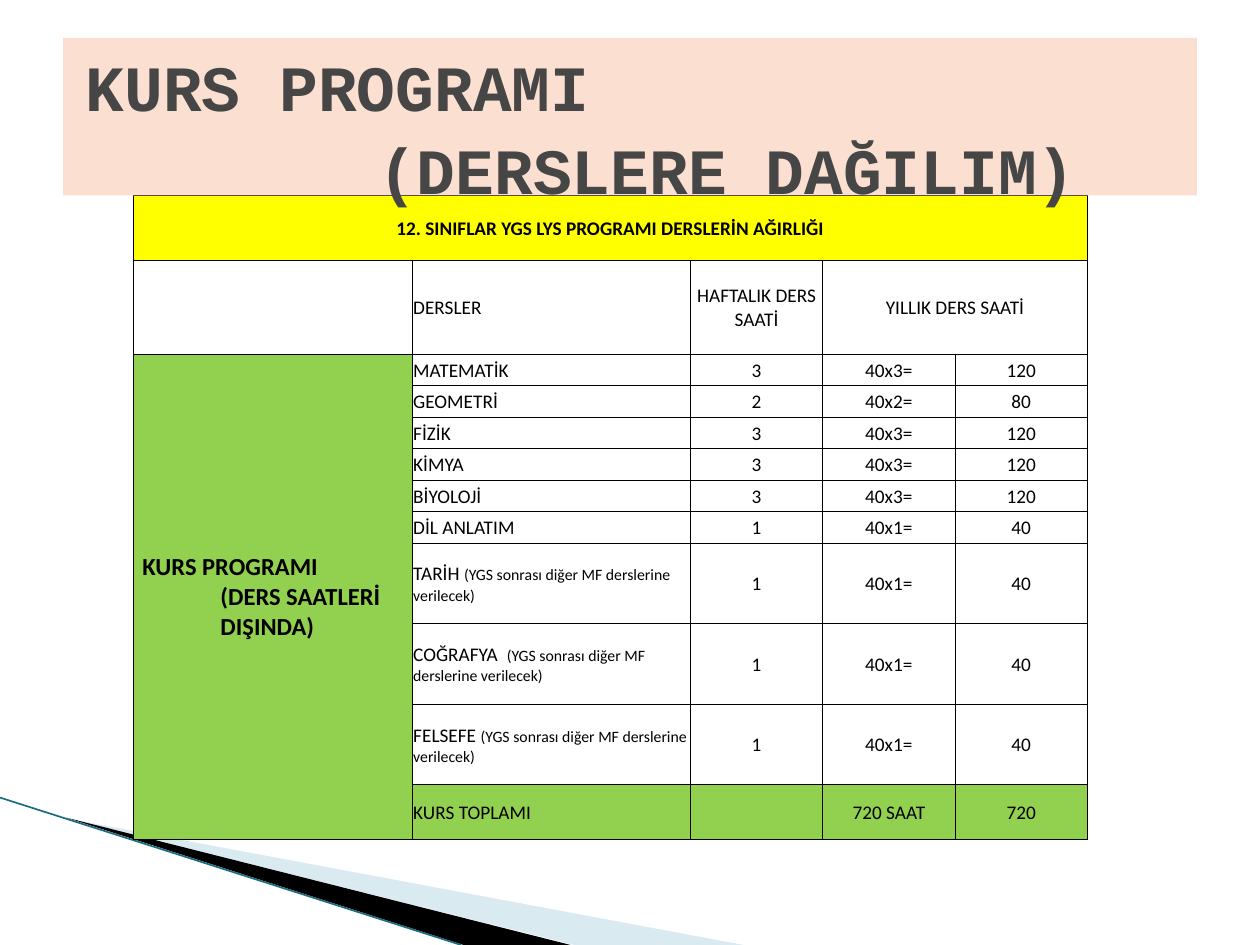
from lxml.etree import SubElement
from pptx import Presentation
from pptx.dml.color import RGBColor
from pptx.enum.shapes import MSO_CONNECTOR
from pptx.enum.text import MSO_ANCHOR, MSO_AUTO_SIZE, PP_ALIGN
from pptx.oxml.ns import qn
from pptx.util import Inches, Pt

BLACK = RGBColor(0x00, 0x00, 0x00)
YELLOW = RGBColor(0xFF, 0xFF, 0x00)
GREEN = RGBColor(0x92, 0xD0, 0x50)
PEACH = RGBColor(0xFB, 0xE0, 0xD1)
GREY = RGBColor(0x46, 0x46, 0x46)
PALE_BLUE = RGBColor(0xA0, 0xCB, 0xDC)
TEAL = RGBColor(0x1A, 0x6C, 0x80)

WIDTH, HEIGHT = 10, 7.5
TABLE_LEFT, TABLE_TOP = 1.06, 1.55
COLUMNS = [2.21] * 2 + [1.05] * 3
ROWS = [0.52, 0.74] + [0.25] * 6 + [0.64] * 3 + [0.43]
LAST_ROW, LAST_COLUMN = len(ROWS) - 1, len(COLUMNS) - 1
WEEKS = 40
LATER = "(YGS sonrası diğer MF derslerine verilecek)"
# lesson, small note after it, weekly hours
LESSONS = [
    ("MATEMATİK", "", 3), ("GEOMETRİ", "", 2), ("FİZİK", "", 3),
    ("KİMYA", "", 3), ("BİYOLOJİ", "", 3), ("DİL ANLATIM", "", 1),
    ("TARİH ", LATER, 1), ("COĞRAFYA  ", LATER, 1), ("FELSEFE ", LATER, 1),
]

CELL_TEXT = {"name": "Calibri", "size": Pt(11), "bold": False}
NOTE_TEXT = {**CELL_TEXT, "size": Pt(9)}
HEAD_TEXT = {**CELL_TEXT, "bold": True}
SIDE_TEXT = {**HEAD_TEXT, "size": Pt(14)}
TITLE_TEXT = {"name": "Courier New", "size": Pt(36.9), "bold": True}


def set_format(target, values):
    for name, value in values.items():
        setattr(target, name, value)


def add_span(para, text, style, color=BLACK):
    span = para.add_run()
    span.text = text
    set_format(span.font, style)
    span.font.color.rgb = color


def add_hanging_lines(para, first, rest, style, color, margin, hang):
    """Write two lines, the second starting `hang` inches further right."""
    para.alignment = PP_ALIGN.LEFT
    props = para._p.get_or_add_pPr()
    props.set("marL", str(Inches(margin + hang)))
    props.set("indent", str(-Inches(hang)))
    add_span(para, first, style, color)
    para.add_line_break()
    add_span(para, rest, style, color)


def add_wedge(page, points, color, opacity=None):
    start, *others = [(Inches(x), Inches(y)) for x, y in points]
    builder = page.shapes.build_freeform(*start)
    builder.add_line_segments(others)
    wedge = builder.convert_to_shape()
    wedge.shadow.inherit = False
    wedge.line.fill.background()
    wedge.fill.solid()
    wedge.fill.fore_color.rgb = color
    if opacity:
        fill_color = wedge._element.spPr.find(f".//{qn('a:srgbClr')}")
        SubElement(fill_color, qn("a:alpha")).set("val", str(opacity * 1000))


def add_corner(page):
    add_wedge(page, [(0.55, 6.5), (5.9, HEIGHT), (4.56, HEIGHT)], PALE_BLUE, 40)
    add_wedge(page, [(0.53, 6.49), (4.53, HEIGHT), (3.68, HEIGHT)], BLACK)
    edge = page.shapes.add_connector(
        MSO_CONNECTOR.STRAIGHT, 0, Inches(6.33), Inches(3.66), Inches(HEIGHT))
    edge.line.color.rgb = TEAL
    edge.line.width = Pt(0.95)
    SubElement(edge._element.spPr, qn("a:effectLst"))


def set_borders(cell, widths):
    """Widths in points by side letter; 0 hides that side."""
    props = cell._tc.get_or_add_tcPr()
    for side in "LRTB":
        line = SubElement(props, qn(f"a:ln{side}"), w=str(Pt(widths[side])))
        if widths[side]:
            fill = SubElement(line, qn("a:solidFill"))
            SubElement(fill, qn("a:srgbClr"), val=str(BLACK))
        else:
            SubElement(line, qn("a:noFill"))


def format_cell(cell, row, column):
    side_end = row == LAST_ROW and column == 0
    set_borders(cell, {
        "L": 1 if column == 0 else 0.5,
        "R": 1 if column == LAST_COLUMN else 0.5,
        "T": 1 if row == 0 else 0.5,
        "B": 0 if side_end else 0.5,
    })
    if row == 0:
        color = YELLOW
    elif row == LAST_ROW or (column == 0 and row > 1):
        color = GREEN
    else:
        color = None
    if color is None:
        cell.fill.background()
    else:
        cell.fill.solid()
        cell.fill.fore_color.rgb = color
    set_format(cell, {
        "margin_left": Inches(0.01), "margin_right": Inches(0.01),
        "margin_top": Inches(0.01), "margin_bottom": 0,
        "vertical_anchor": MSO_ANCHOR.MIDDLE,
    })


def fill_row(table, row, texts):
    """Write lesson, note, and the centred values of the last columns."""
    lesson, note, *values = texts
    para = table.cell(row, 1).text_frame.paragraphs[0]
    add_span(para, lesson, CELL_TEXT)
    if note:
        add_span(para, note, NOTE_TEXT)
    for column, value in enumerate(values, start=2):
        if value:
            para = table.cell(row, column).text_frame.paragraphs[0]
            para.alignment = PP_ALIGN.CENTER
            add_span(para, value, CELL_TEXT)


def add_lesson_table(page):
    table = page.shapes.add_table(
        len(ROWS), len(COLUMNS), Inches(TABLE_LEFT), Inches(TABLE_TOP),
        Inches(sum(COLUMNS)), Inches(sum(ROWS))).table
    table.first_row = table.horz_banding = False
    for column, width in zip(table.columns, COLUMNS):
        column.width = Inches(width)
    for row, height in zip(table.rows, ROWS):
        row.height = Inches(height)
    for row in range(len(ROWS)):
        for column in range(len(COLUMNS)):
            format_cell(table.cell(row, column), row, column)
    table.cell(0, 0).merge(table.cell(0, LAST_COLUMN))
    table.cell(1, 3).merge(table.cell(1, LAST_COLUMN))
    table.cell(2, 0).merge(table.cell(LAST_ROW, 0))

    head = table.cell(0, 0).text_frame.paragraphs[0]
    head.alignment = PP_ALIGN.CENTER
    add_span(head, "12. SINIFLAR YGS LYS PROGRAMI DERSLERİN AĞIRLIĞI", HEAD_TEXT)
    add_hanging_lines(
        table.cell(2, 0).text_frame.paragraphs[0], "KURS PROGRAMI",
        "(DERS SAATLERİ DIŞINDA)", SIDE_TEXT, BLACK, 0.06, 0.62)

    fill_row(table, 1, ["DERSLER", "", "HAFTALIK DERS SAATİ", "YILLIK DERS SAATİ"])
    for row, (lesson, note, hours) in enumerate(LESSONS, start=2):
        fill_row(table, row, [lesson, note, str(hours), f"{WEEKS}x{hours}=",
                              str(WEEKS * hours)])
    total = WEEKS * sum(hours for _, _, hours in LESSONS)
    fill_row(table, LAST_ROW, ["KURS TOPLAMI", "", "", f"{total} SAAT", str(total)])


def add_title(page):
    title = page.shapes.title
    set_format(title, {
        "left": Inches(WIDTH * 0.05), "top": Inches(HEIGHT * 0.04),
        "width": Inches(WIDTH * 0.9), "height": Inches(1.25),
    })
    title.fill.solid()
    title.fill.fore_color.rgb = PEACH
    frame = title.text_frame
    set_format(frame, {
        "word_wrap": True, "auto_size": MSO_AUTO_SIZE.NONE,
        "vertical_anchor": MSO_ANCHOR.MIDDLE,
        "margin_top": Inches(0.12), "margin_bottom": 0,
    })
    para = frame.paragraphs[0]
    para.line_spacing = 1.07
    add_hanging_lines(para, "KURS PROGRAMI", "(DERSLERE DAĞILIM)",
                      TITLE_TEXT, GREY, 0.08, 2.32)
    page.shapes._spTree.append(title._element)  # bring to front


def main():
    deck = Presentation()
    deck.slide_width, deck.slide_height = Inches(WIDTH), Inches(HEIGHT)
    page = deck.slides.add_slide(deck.slide_layouts[5])
    add_corner(page)
    add_lesson_table(page)
    add_title(page)
    deck.save("out.pptx")


if __name__ == "__main__":
    main()
